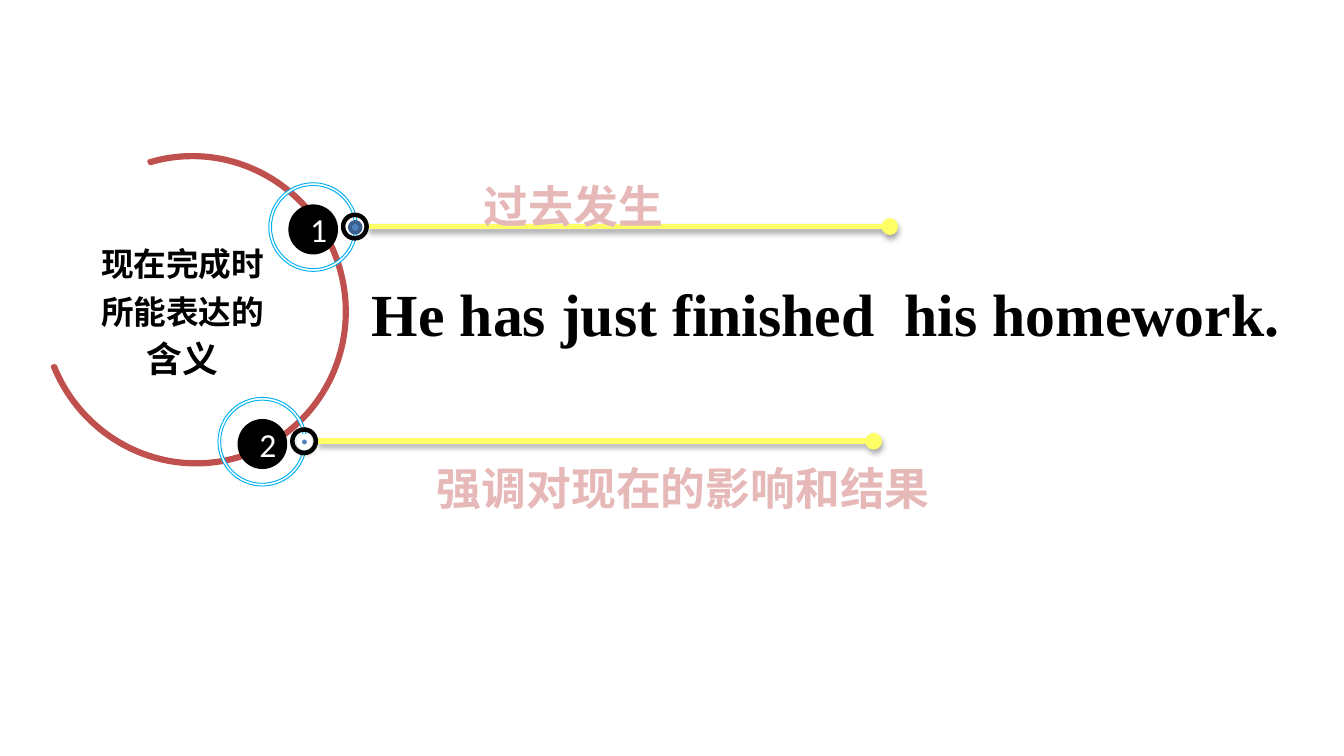
from lxml import etree
from pptx import Presentation
from pptx.dml.color import RGBColor
from pptx.enum import shapes, text
from pptx.oxml import parse_xml
from pptx.oxml.ns import nsdecls
from pptx.util import Pt

color = RGBColor.from_string


def add_outlined(kind, box, fill, line, width):
    """Add a filled preset shape with an outline; box is left, top, width, height."""
    outlined = slide.shapes.add_shape(kind, *map(Pt, box))
    outlined.fill.solid()
    outlined.fill.fore_color.rgb = color(fill)
    outlined.line.color.rgb = color(line)
    outlined.line.width = Pt(width)
    outlined.shadow.inherit = False
    return outlined


def cast_shadow(item, opacity):
    """Give a shape or connector a soft black shadow straight below it."""
    properties = item._element.spPr
    for effects in properties.findall("{*}effectLst"):
        properties.remove(effects)
    properties.append(parse_xml(
        f'<a:effectLst {nsdecls("a")}><a:outerShdw blurRad="{Pt(3.1)}" dist="{Pt(1.8)}" '
        'dir="5400000" rotWithShape="0"><a:srgbClr val="000000">'
        f'<a:alpha val="{opacity * 1000}"/></a:srgbClr></a:outerShdw></a:effectLst>'))


prs = Presentation()
prs.slide_width, prs.slide_height = Pt(720), Pt(405)
slide = prs.slides.add_slide(prs.slide_layouts[6])
preset = shapes.MSO_SHAPE

# Open red circle around the topic
arc = add_outlined(preset.BLOCK_ARC, (22.3, 82.8, 163.4, 166.3), "FFFFFF", "C0504D", 2)
arc.rotation = 158.3
for index, value in enumerate((56.92, 215.88, 0.008)):
    arc.adjustments[index] = value

# Topic
topic = slide.shapes.add_textbox(Pt(39.6), Pt(123.8), Pt(116.6), Pt(81.4)).text_frame
topic.word_wrap = True
topic.vertical_anchor = text.MSO_ANCHOR.MIDDLE
topic_line = topic.paragraphs[0]
topic_line.alignment = text.PP_ALIGN.CENTER
topic_line.line_spacing = Pt(26)
for words, size in (("现在完成时所能表达的", 17.5), ("含义", 19.2)):
    run = topic_line.add_run()
    run.text = words
    run.font.name = "Times New Roman"
    run.font.size = Pt(size)
    run.font.bold = True
    run.font.color.rgb = color("000000")

# Numbered markers: number, left, top, end of the yellow line, dot outline and its width
markers = (("1", 144, 97.9, 476.7, "3A5F8C", 2),
           ("2", 116.8, 212.9, 468, "FFFFFF", 3))
for number, left, top, line_end, dot_line, dot_width in markers:
    line_y = Pt(top + 23.5)
    ray = slide.shapes.add_connector(shapes.MSO_CONNECTOR.STRAIGHT,
                                     Pt(left + 53.6), line_y, Pt(line_end), line_y)
    ray.line.color.rgb = color("FFFF66")
    ray.line.width = Pt(3)
    ray.line._get_or_add_ln().append(parse_xml(f'<a:tailEnd {nsdecls("a")} type="oval"/>'))
    cast_shadow(ray, 35)

    ring = add_outlined(preset.DONUT, (left, top, 47.5, 47.5), "FFFFFF", "00B0F0", 0.5)
    hub = add_outlined(preset.DONUT, (left + 39.6, top + 17, 13, 13), "000000", "000000", 2)
    for donut in (ring, hub):
        donut.adjustments[0] = 0.031
    dot = add_outlined(preset.OVAL, (left + 43.4, top + 21, 5.8, 5.8),
                       "4F81BD", dot_line, dot_width)
    if number == "2":
        cast_shadow(dot, 38)

    badge = add_outlined(preset.OVAL, (left + 11.5, top + 12.6, 24.6, 24.8),
                         "000000", "000000", 2)
    badge.text_frame.text = number
    badge.text_frame.vertical_anchor = text.MSO_ANCHOR.MIDDLE
    digit = badge.text_frame.paragraphs[0]
    digit.alignment = text.PP_ALIGN.CENTER
    digit.font.name = "Calibri"
    digit.font.size = Pt(18)
    digit.font.color.rgb = color("FFFFFF")

# Example sentence and the two meanings: words, box, font, size, colour, line spacing
statements = (
    ("He has just finished  his homework.", (192.2, 157, 516.2, 33.1),
     "Times New Roman", 32, "000000", Pt(26)),
    ("过去发生", (252.2, 92.2, 188.5, 36), "Calibri", 24, "E6B9B8", None),
    ("强调对现在的影响和结果", (227, 243.4, 300, 36), "Calibri", 24, "E6B9B8", None),
)
for words, box, font, size, ink, spacing in statements:
    statement = slide.shapes.add_textbox(*map(Pt, box)).text_frame
    statement.word_wrap = True
    statement.auto_size = text.MSO_AUTO_SIZE.SHAPE_TO_FIT_TEXT
    statement.text = words
    sentence = statement.paragraphs[0]
    sentence.line_spacing = spacing
    run = sentence.runs[0]
    run.font.name = font
    run.font.size = Pt(size)
    run.font.bold = True
    run.font.color.rgb = color(ink)

prs.save("out.pptx")
